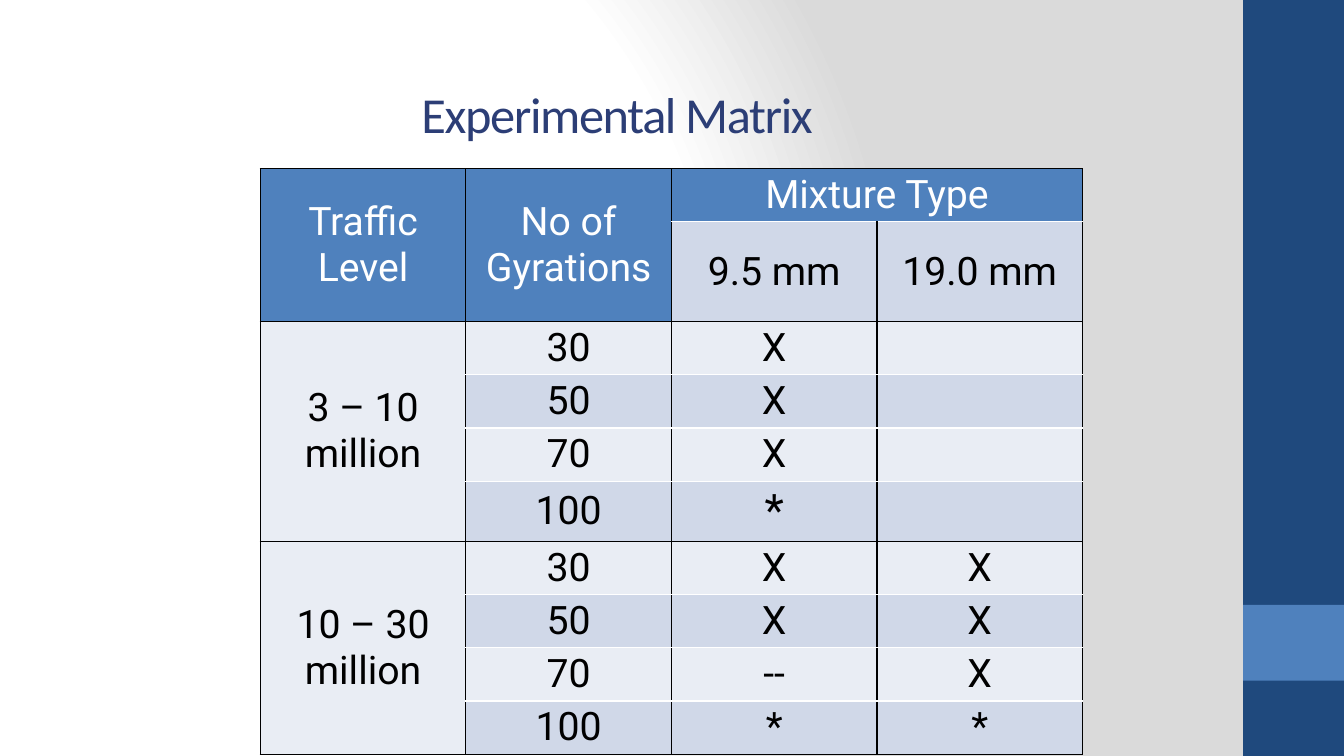
import pptx
import pptx.dml.color
import pptx.enum.shapes
import pptx.enum.text
import pptx.oxml
import pptx.oxml.ns
import pptx.util

Cm, Pt = pptx.util.Cm, pptx.util.Pt
MID = pptx.enum.text.MSO_ANCHOR.MIDDLE

TITLE = "Experimental Matrix"
ROWS = [
    ("Traffic Level", "No of Gyrations", "Mixture Type", ""),
    ("", "", "9.5 mm", "19.0 mm"),
    ("3 – 10 million", "30", "X", ""),
    ("", "50", "X", ""),
    ("", "70", "X", ""),
    ("", "100", "*", ""),
    ("10 – 30 million", "30", "X", "X"),
    ("", "50", "X", "X"),
    ("", "70", "--", "X"),
    ("", "100", "*", "*"),
]
MERGES = [(0, 0, 1, 0), (0, 1, 1, 1), (0, 2, 0, 3), (2, 0, 5, 0), (6, 0, 9, 0)]
STARTS, ENDS = (0, 2, 6), (1, 5, 9)
ROW, COL = 1.34, 5.18
TALL = {1: 2.5, 5: 1.52}
BIG = {(5, 2): 32}
BARS = [(0, 19.05, "1F497D"), (15.24, 1.91, "4F81BD")]
STOPS = [(0, "FFFFFF"), (75, "FFFFFF"), (100, "DADADA")]
HEAD, DARK, PALE = "4F81BD", "D0D8E8", "E9EDF4"
BLACK, WHITE = "000000", "FFFFFF"


def paint(color, value):
    """Set a color from a hex string."""
    color.rgb = pptx.dml.color.RGBColor.from_string(value)


def write(para, text, font, size, color):
    """Add one styled run to a paragraph."""
    run = para.add_run()
    run.text = text
    run.font.name = font
    run.font.size = Pt(size)
    paint(run.font.color, color)
    return run


def shade(slide):
    """Give the slide a radial gradient background."""
    stops = "".join(
        f'<a:gs pos="{pos * 1000}"><a:srgbClr val="{color}"/></a:gs>'
        for pos, color in STOPS)
    back = pptx.oxml.parse_xml(
        f'<p:bg {pptx.oxml.ns.nsdecls("p", "a")}><p:bgPr>'
        f'<a:gradFill rotWithShape="1"><a:gsLst>{stops}</a:gsLst>'
        '<a:path path="circle"><a:fillToRect l="20000" t="50000" '
        'r="100000" b="50000"/></a:path></a:gradFill>'
        '<a:effectLst/></p:bgPr></p:bg>')
    slide.element.cSld.insert(0, back)


def edge(cell, side, color):
    """Draw one border of a cell."""
    cell._tc.get_or_add_tcPr().append(pptx.oxml.parse_xml(
        f'<a:ln{side} {pptx.oxml.ns.nsdecls("a")} w="{Pt(1)}">'
        f'<a:solidFill><a:srgbClr val="{color}"/></a:solidFill></a:ln{side}>'))


def style(cell, row, col):
    """Set the borders, fill and text of a cell."""
    head = row == 0 or (row == 1 and col < 2)
    block = col == 0 or head and col == 1
    top = BLACK if block or row in STARTS else WHITE
    base = BLACK if block or row in ENDS else WHITE
    for side, color in zip("LRTB", (BLACK, BLACK, top, base)):
        edge(cell, side, color)
    cell.fill.solid()
    band = PALE if col == 0 or row % 2 == 0 else DARK
    paint(cell.fill.fore_color, HEAD if head else band)
    cell.margin_left = cell.margin_right = Cm(0.18)
    cell.margin_top = cell.margin_bottom = Cm(0.07)
    cell.vertical_anchor = MID
    para = cell.text_frame.paragraphs[0]
    para.alignment = pptx.enum.text.PP_ALIGN.CENTER
    if ROWS[row][col]:
        write(para, ROWS[row][col], "Roboto", BIG.get((row, col), 28),
              WHITE if head else BLACK)


def main():
    """Build and save the slide."""
    deck = pptx.Presentation()
    deck.slide_width, deck.slide_height = Cm(33.87), Cm(19.05)
    slide = deck.slides.add_slide(deck.slide_layouts[6])
    shade(slide)
    for top, height, color in BARS:
        bar = slide.shapes.add_shape(
            pptx.enum.shapes.MSO_SHAPE.RECTANGLE,
            Cm(31.33), Cm(top), Cm(2.54), Cm(height))
        bar.shadow.inherit = False
        bar.fill.solid()
        paint(bar.fill.fore_color, color)
        bar.line.fill.background()

    box = slide.shapes.add_textbox(Cm(10.37), Cm(1.48), Cm(17.98), Cm(2.75))
    frame = box.text_frame
    frame.word_wrap = True
    frame.vertical_anchor = MID
    run = write(frame.paragraphs[0], TITLE, "Calibri", 36, "2C3E76")
    run.font._element.set("spc", "-100")

    highs = [TALL.get(row, ROW) for row in range(len(ROWS))]
    wide = len(ROWS[0])
    grid = slide.shapes.add_table(
        len(ROWS), wide, Cm(6.56), Cm(4.25), Cm(COL * wide), Cm(sum(highs))).table
    grid.horz_banding = grid.first_row = False
    for col in grid.columns:
        col.width = Cm(COL)
    for row, high in enumerate(highs):
        grid.rows[row].height = Cm(high)
        for col in range(wide):
            style(grid.cell(row, col), row, col)
    for top, left, low, right in MERGES:
        grid.cell(top, left).merge(grid.cell(low, right))
    deck.save("out.pptx")


if __name__ == "__main__":
    main()
